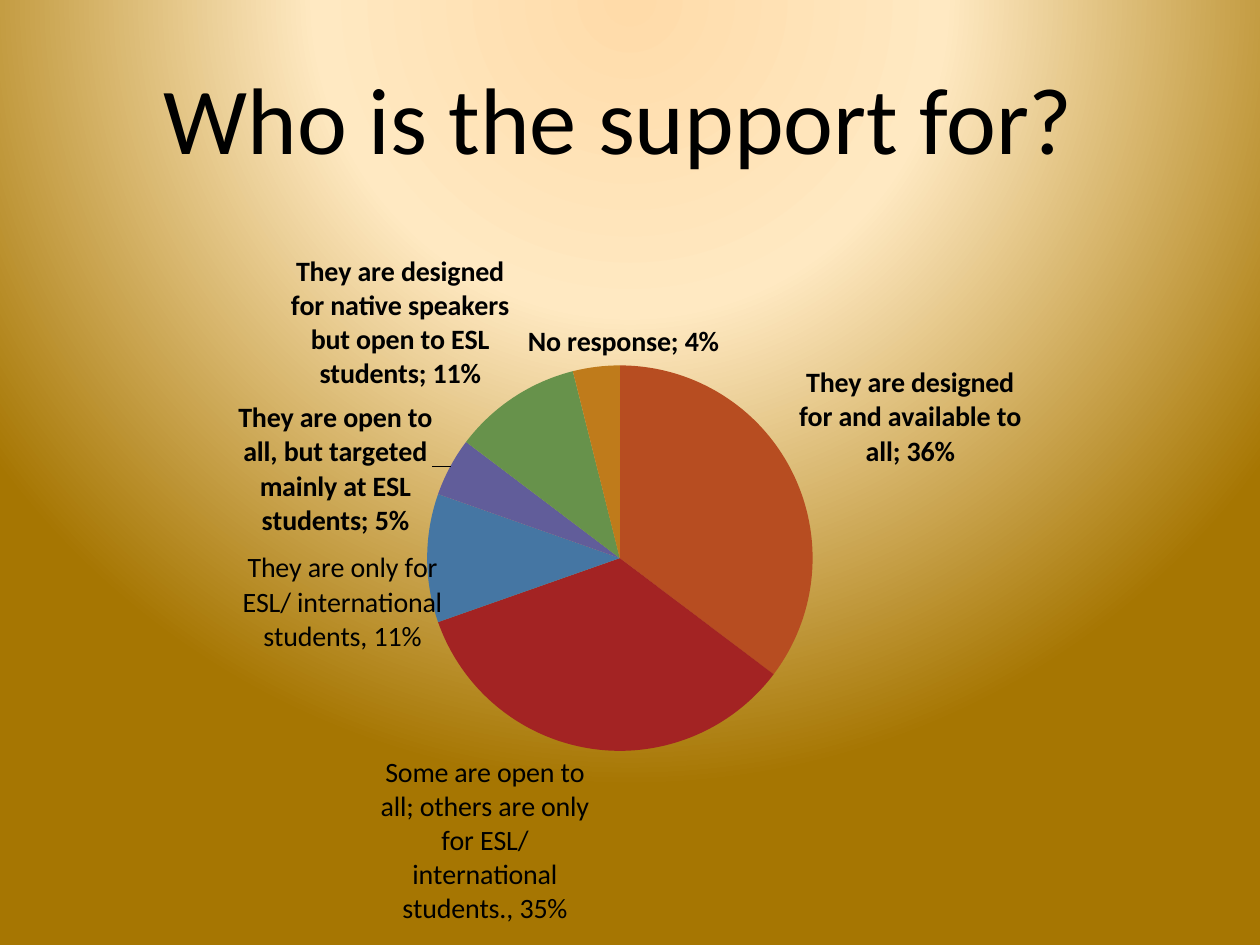
from dataclasses import dataclass

from pptx import Presentation
from pptx import util as u
from pptx.chart.data import CategoryChartData
from pptx.dml.color import RGBColor
from pptx.enum import chart as charts, text
from pptx.oxml import parse_xml
from pptx.oxml.ns import nsdecls, qn


@dataclass(frozen=True)
class Theme:
    font: str = "Calibri"
    ink: str = "000000"
    title_size: int = 54
    label_size: int = 16
    chart_size: int = 10
    backdrop: tuple = ((0, "FFDBA9"), (40, "FFE9C2"), (100, "A67602"))


THEME = Theme()

# Category, share, slice colour
ANSWERS = [
    ("They are designed for and available to all", 0.36, "B74D21"),
    ("Some are open to all; others are only for ESL/international students.", 0.35, "A32323"),
    ("They are only for ESL/international students", 0.11, "4576A3"),
    ("They are open to all, but targeted mainly at ESL students", 0.05, "615D9A"),
    ("They are designed for native speakers but open to ESL students", 0.11, "67924B"),
    ("No response", 0.04, "BF7B1B"),
]
CUSTOM_LABELS = {
    1: "Some are open to all; others are only for ESL/ international students., 35%",
    2: "They are only for ESL/ international students, 11%",
}
# Label shifts as fractions of the chart's width and height
LABEL_SHIFTS = {2: (0.02, 0.06), 3: (-0.01, 0.1), 5: (0.11, 0)}


def style_font(font, size, bold=False):
    font.name = THEME.font
    font.size = u.Pt(size)
    font.bold = bold
    font.color.rgb = RGBColor.from_string(THEME.ink)


def paint_background(page):
    fill = page.background.fill
    fill.solid()
    stops = "".join(
        f'<a:gs pos="{place * 1000}"><a:srgbClr val="{colour}"/></a:gs>'
        for place, colour in THEME.backdrop
    )
    gradient = parse_xml(
        f'<a:gradFill {nsdecls("a")} rotWithShape="1"><a:gsLst>{stops}</a:gsLst>'
        '<a:path path="circle"><a:fillToRect l="50000" t="-80000" r="50000" b="180000"/>'
        "</a:path></a:gradFill>"
    )
    solid = page.background._cSld.find(".//" + qn("a:solidFill"))
    solid.getparent().replace(solid, gradient)


def add_title(page, wording):
    title = page.shapes.title
    title.left, title.top = u.Inches(0.62), u.Inches(0.3)
    title.width, title.height = u.Inches(8.75), u.Inches(1.25)
    frame = title.text_frame
    frame.text = wording
    frame.vertical_anchor = text.MSO_ANCHOR.MIDDLE
    para = frame.paragraphs[0]
    para.alignment = text.PP_ALIGN.CENTER
    style_font(para.runs[0].font, THEME.title_size)


def manual_layout(**values):
    parts = "".join(f'<c:{name} val="{value}"/>' for name, value in values.items())
    return parse_xml(
        f'<c:layout {nsdecls("c")}><c:manualLayout>{parts}</c:manualLayout></c:layout>'
    )


def place_pie(chart):
    area = chart._chartSpace.chart.plotArea
    for old in area.findall(qn("c:layout")):
        area.remove(old)
    area.insert(0, manual_layout(
        layoutTarget="inner", xMode="edge", yMode="edge", x=0.361, y=0.223, w=0.343, h=0.517
    ))


def add_separator(labels):
    separator = parse_xml(f'<c:separator {nsdecls("c")}>; </c:separator>')
    labels.find(qn("c:showBubbleSize")).addnext(separator)


def label_slices(series):
    labels = series.data_labels
    labels.show_value = labels.show_category_name = True
    labels.number_format, labels.number_format_is_linked = "0%", False
    labels.position = charts.XL_LABEL_POSITION.OUTSIDE_END
    style_font(labels.font, THEME.label_size, bold=True)

    # Labels with their own wording or place
    for index in sorted(CUSTOM_LABELS.keys() | LABEL_SHIFTS.keys()):
        label = series.points[index].data_label
        if index in CUSTOM_LABELS:
            label.text_frame.text = CUSTOM_LABELS[index]
            style_font(label.text_frame.paragraphs[0].runs[0].font, THEME.label_size)
        else:
            style_font(label.font, THEME.label_size, bold=True)
        label.position = charts.XL_LABEL_POSITION.OUTSIDE_END

    for element in series._element.xpath("c:dLbls/c:dLbl"):
        index = int(element.find(qn("c:idx")).get("val"))
        element.find(qn("c:showCatName")).set("val", "1")
        add_separator(element)
        if index not in CUSTOM_LABELS:
            number = parse_xml(f'<c:numFmt {nsdecls("c")} formatCode="0%" sourceLinked="0"/>')
            (element.find(qn("c:spPr")) if element.find(qn("c:spPr")) is not None
             else element.find(qn("c:txPr"))).addprevious(number)
        if index in LABEL_SHIFTS:
            x, y = LABEL_SHIFTS[index]
            element.find(qn("c:idx")).addnext(manual_layout(x=x, y=y))
    add_separator(labels._element)


def add_pie(page):
    answers = CategoryChartData(number_format="0%")
    answers.categories = [name for name, _, _ in ANSWERS]
    answers.add_series("Series 1", [share for _, share, _ in ANSWERS])
    chart = page.shapes.add_chart(
        charts.XL_CHART_TYPE.PIE,
        u.Inches(0.17), u.Inches(1.58), u.Inches(8.92), u.Inches(5.92), answers,
    ).chart
    chart.has_legend = chart.has_title = False
    style_font(chart.font, THEME.chart_size)
    plot = chart.plots[0]
    plot.vary_by_categories = True
    series = plot.series[0]
    for index, (_, _, colour) in enumerate(ANSWERS):
        fill = series.points[index].format.fill
        fill.solid()
        fill.fore_color.rgb = RGBColor.from_string(colour)
    place_pie(chart)
    label_slices(series)


def main():
    deck = Presentation()
    deck.slide_width, deck.slide_height = u.Inches(10), u.Inches(7.5)
    page = deck.slides.add_slide(deck.slide_layouts[5])
    paint_background(page)
    # The closing space is part of the centred line
    add_title(page, "Who is the support for? ")
    add_pie(page)
    deck.save("out.pptx")


if __name__ == "__main__":
    main()
